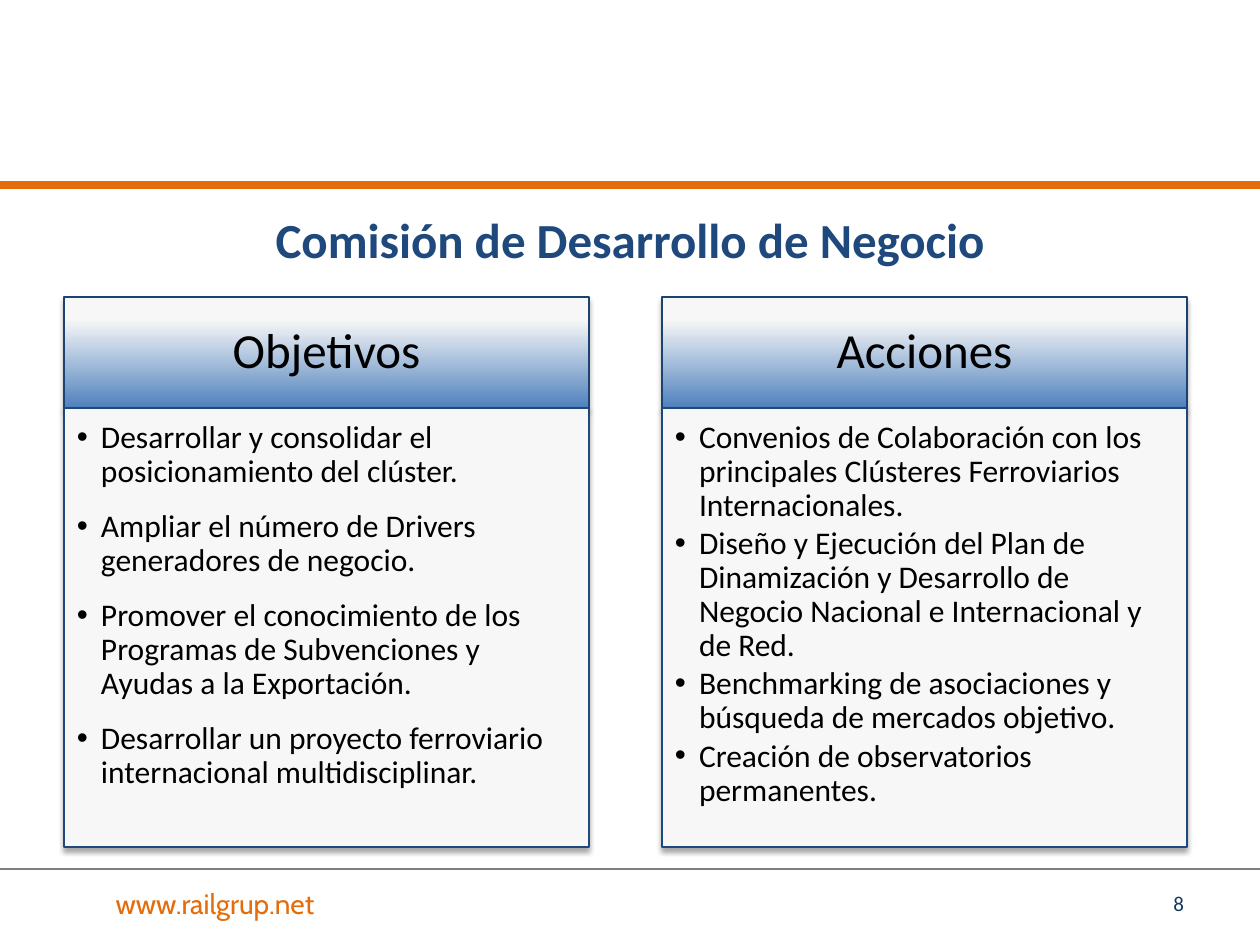
from lxml.etree import SubElement
from pptx import Presentation
from pptx.dml.color import RGBColor
from pptx.enum.shapes import MSO_CONNECTOR
from pptx.enum.text import MSO_ANCHOR, MSO_AUTO_SIZE, PP_ALIGN
from pptx.oxml.ns import qn
from pptx.util import Pt

HUES = {"navy": "1F497D", "edge": "1C4271", "blue": "4F81BD", "pale": "F7F7F7",
        "orange": "E46C0A", "gray": "7F7F7F", "deep": "17375E", "black": "000000"}
TITLE = "Comisión de Desarrollo de Negocio"
CARDS = [
    ("Objetivos", 12, [
        "Desarrollar y consolidar el posicionamiento del clúster.",
        "Ampliar el número de Drivers generadores de negocio.",
        "Promover el conocimiento de los Programas de Subvenciones y Ayudas a la Exportación.",
        "Desarrollar un proyecto ferroviario internacional multidisciplinar.",
    ]),
    ("Acciones", 2.4, [
        "Convenios de Colaboración con los principales Clústeres Ferroviarios Internacionales.",
        "Diseño y Ejecución del Plan de Dinamización y Desarrollo de Negocio Nacional e Internacional y de Red.",
        "Benchmarking de asociaciones y búsqueda de mercados objetivo.",
        "Creación de observatorios permanentes.",
    ]),
]
RULES = [(185, 4.5, "orange"), (869, 0.75, "gray")]
FEET = [("www.railgrup.net", 68, PP_ALIGN.CENTER, 16, "orange", "Cabin"),
        ("8", 903, PP_ALIGN.RIGHT, 12, "deep", "Calibri")]
LEFT, STEP, WIDE = 64, 598, 525
TOP, HEAD, BODY = 297, 111, 439
INDENT = 24


def px(n):
    return round(n * 914400 / 126)


def hue(name):
    return RGBColor.from_string(HUES[name])


def place(shape, x, y, w, h):
    shape.left, shape.top, shape.width, shape.height = map(px, (x, y, w, h))


def setup(shape, anchor, pads):
    frame = shape.text_frame
    frame.word_wrap = True
    frame.auto_size = MSO_AUTO_SIZE.NONE
    frame.vertical_anchor = anchor
    (frame.margin_left, frame.margin_top,
     frame.margin_right, frame.margin_bottom) = map(px, pads)
    return frame


def write(para, text, size, color, align, face="Calibri", bold=False):
    para.alignment = align
    para.space_before = Pt(0)
    run = para.add_run()
    run.text = text
    font = run.font
    font.name, font.size, font.bold = face, Pt(size), bold
    font.color.rgb = hue(color)


def outline(shape, color):
    shape.line.color.rgb = hue(color)
    shape.line.width = Pt(0.75)
    effects = SubElement(shape._element.spPr, qn("a:effectLst"))
    shade = SubElement(effects, qn("a:outerShdw"), blurRad=str(Pt(3.1)),
                       dist=str(Pt(1.8)), dir="5400000", rotWithShape="0")
    tone = SubElement(shade, qn("a:srgbClr"), val=HUES["black"])
    SubElement(tone, qn("a:alpha"), val="35000")


def banner(shape, text, x):
    place(shape, x, TOP, WIDE, HEAD)
    shape.fill.gradient()
    shape.fill.gradient_angle = 90
    for stop, (spot, color) in zip(shape.fill.gradient_stops, [(0, "blue"), (0.8, "pale")]):
        stop.position = spot
        stop.color.rgb = hue(color)
    outline(shape, "edge")
    para = setup(shape, MSO_ANCHOR.MIDDLE, (28, 15, 28, 15)).paragraphs[0]
    para.line_spacing = 0.9
    write(para, text, 28, "black", PP_ALIGN.CENTER)


def panel(shape, items, gap, x):
    place(shape, x, TOP + HEAD, WIDE, BODY)
    shape.fill.solid()
    shape.fill.fore_color.rgb = hue("pale")
    outline(shape, "navy")
    frame = setup(shape, MSO_ANCHOR.TOP, (13, 13, 18, 20))
    for i, item in enumerate(items):
        para = frame.add_paragraph() if i else frame.paragraphs[0]
        props = para._p.get_or_add_pPr()
        props.set("marL", str(px(INDENT)))
        props.set("indent", str(-px(INDENT)))
        SubElement(props, qn("a:buFont"), typeface="Arial")
        SubElement(props, qn("a:buChar"), char="•")
        para.line_spacing = 0.9
        para.space_after = Pt(gap)
        write(para, item, 18, "black", PP_ALIGN.LEFT)


def main():
    deck = Presentation()
    deck.slide_width, deck.slide_height = px(1260), px(945)
    slide = deck.slides.add_slide(deck.slide_layouts[4])
    shapes = slide.shapes
    for y, width, color in RULES:
        rule = shapes.add_connector(MSO_CONNECTOR.STRAIGHT, 0, px(y), px(1260), px(y))
        rule.line.color.rgb = hue(color)
        rule.line.width = Pt(width)
        SubElement(rule._element.spPr, qn("a:effectLst"))
    title = shapes.title
    place(title, 64, 204, 1132, 90)
    frame = setup(title, MSO_ANCHOR.TOP, (13, 6, 13, 6))
    write(frame.paragraphs[0], TITLE, 28, "navy", PP_ALIGN.CENTER, bold=True)
    for i, (head, gap, items) in enumerate(CARDS):
        x = LEFT + i * STEP
        banner(slide.placeholders[1 + 2 * i], head, x)
        panel(slide.placeholders[2 + 2 * i], items, gap, x)
    for text, x, align, size, color, face in FEET:
        box = shapes.add_textbox(px(x), px(878), px(294), px(50))
        frame = setup(box, MSO_ANCHOR.MIDDLE, (13, 6, 13, 6))
        write(frame.paragraphs[0], text, size, color, align, face)
    deck.save("out.pptx")


if __name__ == "__main__":
    main()
